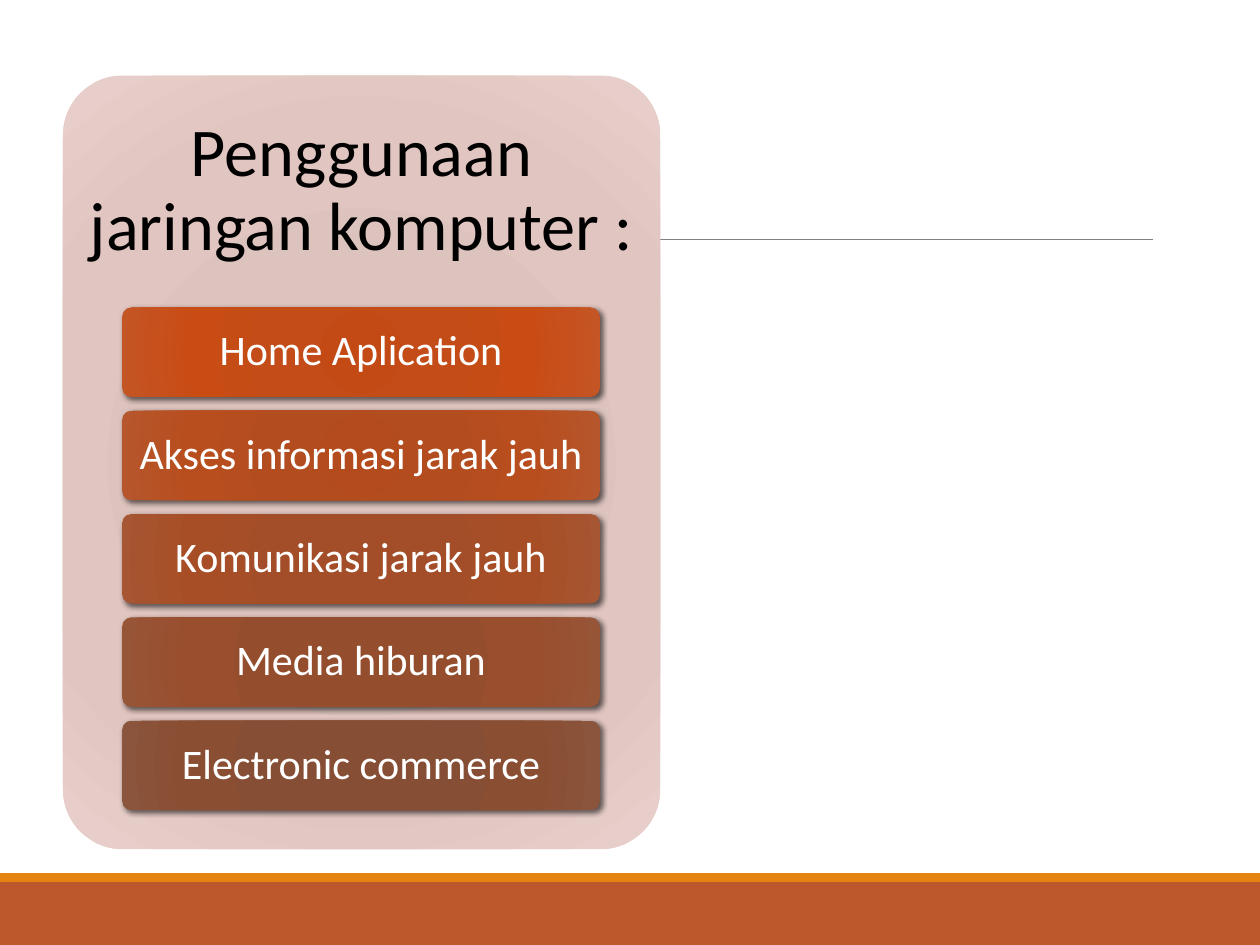
"""Build the slide on the uses of computer networks."""
from lxml.etree import SubElement
from pptx import Presentation
from pptx.dml.color import RGBColor
from pptx.enum.shapes import MSO_CONNECTOR as Connector, MSO_SHAPE as Shape
from pptx.enum.text import MSO_ANCHOR as Anchor, MSO_AUTO_SIZE as AutoSize, PP_ALIGN as Align
from pptx.oxml import parse_xml
from pptx.oxml.ns import nsdecls, qn
from pptx.util import Inches, Pt

BLACK = RGBColor(0x00, 0x00, 0x00)
WHITE = RGBColor(0xFF, 0xFF, 0xFF)
GREY = RGBColor(0x80, 0x80, 0x80)
RUST = RGBColor(0xBD, 0x58, 0x2C)
ORANGE = RGBColor(0xE4, 0x83, 0x12)
PANEL_COLORS = [RGBColor.from_string(c) for c in ("DBC0BC", "DDC3BE", "E1C5C0", "E9D0CC")]
STOPS = (0, 34, 70, 100)
USES = {
    "Home Aplication": ("C44A15", "C34C18", "C94C15", "C45525"),
    "Akses informasi jarak jauh": ("B44B1D", "B34D20", "B84D1E", "B5562C"),
    "Komunikasi jarak jauh": ("A44C25", "A34E28", "A84E26", "A65632"),
    "Media hiburan": ("954C2C", "944E2E", "994E2D", "975538"),
    "Electronic commerce": ("874C32", "864E34", "8A4E33", "8A553C"),
}


def add_gradient_box(shapes, left, top, width, height, colors):
    box = shapes.add_shape(Shape.ROUNDED_RECTANGLE, *map(Inches, (left, top, width, height)))
    box.adjustments[0] = 0.1
    box.fill.background()
    box.line.fill.background()
    box.shadow.inherit = False
    stops = "".join(
        f'<a:gs pos="{stop * 1000}"><a:srgbClr val="{color}"/></a:gs>'
        for stop, color in zip(STOPS, colors)
    )
    gradient = parse_xml(
        f'<a:gradFill {nsdecls("a")} rotWithShape="1"><a:gsLst>{stops}</a:gsLst>'
        '<a:path path="circle"><a:fillToRect l="100000" t="100000" r="100000" b="100000"/>'
        "</a:path></a:gradFill>"
    )
    properties = box.element.spPr
    properties.replace(properties.find(qn("a:noFill")), gradient)
    return box


def write_text(shape, text, size, color, margins):
    frame = shape.text_frame
    frame.text = text
    frame_format = {"word_wrap": True, "auto_size": AutoSize.NONE, "vertical_anchor": Anchor.MIDDLE}
    for side, margin in zip(("left", "top", "right", "bottom"), margins):
        frame_format[f"margin_{side}"] = Inches(margin)
    for name, value in frame_format.items():
        setattr(frame, name, value)
    para = frame.paragraphs[0]
    for name, value in {"alignment": Align.CENTER, "line_spacing": 0.9, "space_before": Pt(0)}.items():
        setattr(para, name, value)
    font = para.runs[0].font
    for name, value in {"name": "Calibri", "size": Pt(size), "bold": False}.items():
        setattr(font, name, value)
    font.color.rgb = color


deck = Presentation()
deck.slide_width, deck.slide_height = Inches(10), Inches(7.5)
page = deck.slides.add_slide(deck.slide_layouts[5])
shapes = page.shapes
title = shapes.title

for top, height, color in ((7, 0.5, RUST), (6.93, 0.07, ORANGE)):
    band = shapes.add_shape(Shape.RECTANGLE, 0, Inches(top), Inches(10), Inches(height))
    band.fill.solid()
    band.fill.fore_color.rgb = color
    band.line.fill.background()
    band.shadow.inherit = False

rule = shapes.add_connector(Connector.STRAIGHT, Inches(0.98), Inches(1.9), Inches(9.15), Inches(1.9))
rule.line.color.rgb = GREY
rule.line.width = Pt(0.5)
SubElement(rule.element.spPr, qn("a:effectLst"))

panel = add_gradient_box(shapes, 0.5, 0.6, 4.74, 6.14, PANEL_COLORS)
panel.element.addnext(title.element)
for name, value in {"left": 0.5, "top": 0.6, "width": 4.74, "height": 1.84}.items():
    setattr(title, name, Inches(value))
write_text(title, "Penggunaan jaringan komputer :", 39, BLACK, [0.16] * 4)

for row, (use, codes) in enumerate(USES.items()):
    colors = [RGBColor.from_string(code) for code in codes]
    bar = add_gradient_box(shapes, 0.97, 2.44 + 0.82 * row, 3.79, 0.71, colors)
    write_text(bar, use, 24, WHITE, (0.09, 0.07, 0.09, 0.07))
    effects = bar.element.spPr.find(qn("a:effectLst"))
    effects.append(parse_xml(
        f'<a:outerShdw {nsdecls("a")} blurRad="{Pt(3)}" dist="{Pt(2)}" dir="2700000" '
        'algn="ctr" rotWithShape="0"><a:srgbClr val="000000"><a:alpha val="60000"/>'
        "</a:srgbClr></a:outerShdw>"
    ))

deck.save("out.pptx")
